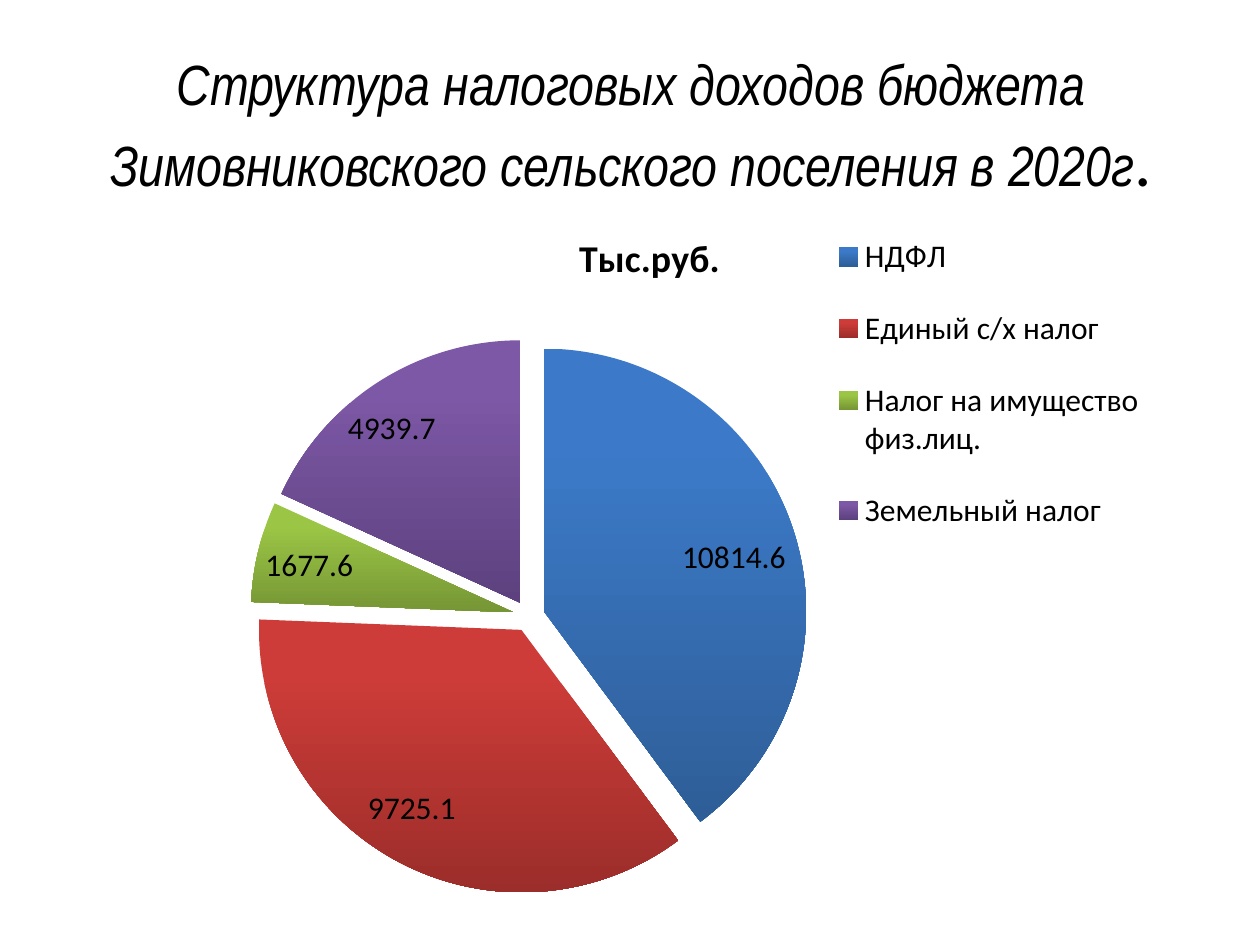
from dataclasses import dataclass

from pptx import Presentation
from pptx.chart.data import CategoryChartData as Data
from pptx.dml.color import RGBColor as Rgb
from pptx.enum.chart import XL_CHART_TYPE as Kind, XL_LABEL_POSITION as Spot
from pptx.enum.chart import XL_LEGEND_POSITION as Side
from pptx.enum.text import MSO_ANCHOR as Anchor, PP_ALIGN as Align
from pptx.oxml import parse_xml
from pptx.oxml.ns import nsdecls, qn
from pptx.util import Pt

COLORS = {
    "ink": "000000",
    "blue": "3C7AC9", "navy": "2E5E97",
    "red": "CD3C38", "wine": "9B2D2A",
    "lime": "9BC645", "moss": "769535",
    "plum": "7D58A6", "dusk": "5D417E",
}


@dataclass
class Slice:
    name: str
    value: float
    top: str
    base: str
    dx: float
    dy: float


@dataclass
class Piece:
    text: str
    face: str
    size: float
    slant: bool


SLICES = [
    Slice("НДФЛ", 10814.6, "blue", "navy", 0, 0.01),
    Slice("Единый с/х налог", 9725.1, "red", "wine", -0.03, -0.04),
    Slice("Налог на имущество физ.лиц.", 1677.6, "lime", "moss", 0, -0.01),
    Slice("Земельный налог", 4939.7, "plum", "dusk", -0.03, 0.03),
]
TITLE = [
    Piece("Структура налоговых доходов бюджета Зимовниковского сельского поселения в 2020г",
          "Arial Narrow", 32.4, True),
    Piece(".", "Calibri", 39.6, False),
]


def hue(key: str) -> Rgb:
    return Rgb.from_string(COLORS[key])


def style(font, face: str, size: float) -> None:
    font.name = face
    font.size = Pt(size)
    font.color.rgb = hue("ink")


def add_title(slide) -> None:
    frame = slide.shapes.add_textbox(Pt(36.7), Pt(26), Pt(648), Pt(90)).text_frame
    frame.word_wrap = True
    frame.vertical_anchor = Anchor.MIDDLE
    para = frame.paragraphs[0]
    para.alignment = Align.CENTER
    for piece in TITLE:
        run = para.add_run()
        run.text = piece.text
        style(run.font, piece.face, piece.size)
        run.font.italic = piece.slant


def shade(fill, part: Slice) -> None:
    fill.gradient()
    fill.gradient_angle = 270
    for stop, key, pos in zip(fill.gradient_stops, (part.top, part.base), (0.2, 1)):
        stop.color.rgb = hue(key)
        stop.position = pos


def layout(head: str, **sizes: float):
    marks = "".join(f'<c:{tag} val="{val}"/>' for tag, val in sizes.items())
    return parse_xml(
        f'<c:layout {nsdecls("c")}><c:manualLayout>{head}{marks}'
        "</c:manualLayout></c:layout>")


def place(node, box, after: str = "") -> None:
    for old in node.findall(qn("c:layout")):
        node.remove(old)
    if after:
        node.find(qn(after)).addnext(box)
    else:
        node.insert(0, box)


def add_labels(series) -> None:
    labels = series.data_labels
    labels.show_value = True
    labels.show_percentage = False
    labels.position = Spot.INSIDE_END
    style(labels.font, "Calibri", 18)
    for index, part in enumerate(SLICES):
        label = series.points[index].data_label
        label.position = Spot.INSIDE_END
        style(label.font, "Calibri", 18)
    root = labels._element
    for node, part in zip(root.findall(qn("c:dLbl")), SLICES):
        place(node, layout("", x=part.dx, y=part.dy), "c:idx")
    for lead in root.findall(qn("c:showLeaderLines")):
        lead.set("val", "0")


def add_pie(slide) -> None:
    data = Data(number_format="General")
    data.categories = [part.name for part in SLICES]
    data.add_series("Series 1", [part.value for part in SLICES])
    chart = slide.shapes.add_chart(
        Kind.PIE, Pt(42.5), Pt(116.6), Pt(657.4), Pt(402.5), data).chart
    style(chart.font, "Calibri", 18)

    chart.has_title = True
    run = chart.chart_title.text_frame.paragraphs[0].add_run()
    run.text = "Тыс.руб."
    style(run.font, "Calibri", 21.6)
    run.font.bold = True
    chart.chart_title.include_in_layout = False

    chart.has_legend = True
    chart.legend.position = Side.RIGHT
    chart.legend.include_in_layout = False
    style(chart.legend.font, "Calibri", 18)

    plot = chart.plots[0]
    plot.vary_by_categories = True
    series = plot.series[0]
    for index, part in enumerate(SLICES):
        shade(series.points[index].format.fill, part)
    burst = parse_xml(f'<c:explosion {nsdecls("c")} val="6"/>')
    series._element.find(qn("c:dPt")).addprevious(burst)
    add_labels(series)

    root = chart._chartSpace
    edge = '<c:xMode val="edge"/><c:yMode val="edge"/>'
    inner = f'<c:layoutTarget val="inner"/>{edge}'
    place(root.find(".//" + qn("c:plotArea")),
          layout(inner, x=0.15, y=0.19, w=0.49, h=0.79))
    place(root.find(".//" + qn("c:legend")),
          layout(edge, x=0.65, y=0, w=0.29, h=0.51), "c:legendPos")


def main() -> None:
    deck = Presentation()
    deck.slide_width, deck.slide_height = Pt(720), Pt(540)
    slide = deck.slides.add_slide(deck.slide_layouts[6])
    add_title(slide)
    add_pie(slide)
    deck.save("out.pptx")


if __name__ == "__main__":
    main()
